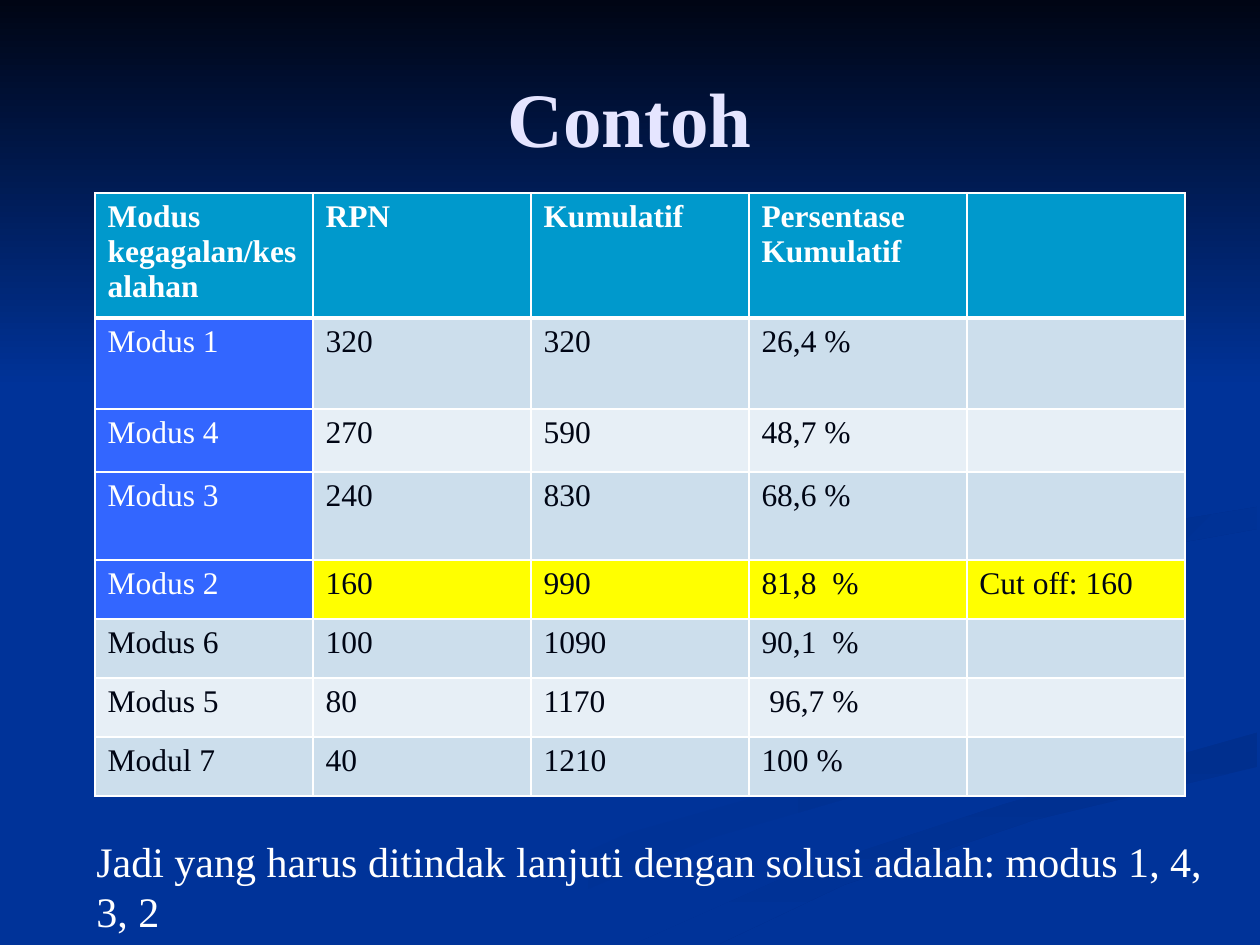
from dataclasses import dataclass

import pptx
import pptx.dml.color
import pptx.enum.shapes
import pptx.enum.text
import pptx.oxml
import pptx.oxml.ns
import pptx.util
from lxml import etree

PX = 914400 / 126


@dataclass(frozen=True)
class Theme:
    font: str = "Times New Roman"
    night: str = "000514"
    blue: str = "003399"
    shade: str = "002F8E"
    faint: str = "003193"
    title: str = "E5E5FF"
    white: str = "FFFFFF"
    header: str = "0099CC"
    chosen: str = "3366FF"
    cutoff: str = "FFFF00"
    bands: tuple = ("CCDEEC", "E7EFF6")
    title_size: int = 44
    note_size: int = 24
    cell_size: int = 18


THEME = Theme()

# Each wave: start colour, end colour, clockwise gradient angle, outline in px
WAVES = [
    (THEME.blue, THEME.faint, 0, [
        (984, 697), (774, 625), (725, 578), (747, 619), (960, 689), (975, 735),
        (629, 833), (378, 944), (455, 944), (711, 838), (990, 757), (1008, 732)]),
    (THEME.blue, THEME.faint, 45, [
        (1188, 718), (1140, 680), (955, 627), (912, 585), (940, 630), (1109, 692),
        (1157, 732), (1126, 762)]),
    (THEME.shade, THEME.blue, 90, [
        (634, 944), (719, 944), (844, 885), (1034, 820), (1257, 767), (1257, 732),
        (1004, 804), (794, 873)]),
    (THEME.blue, THEME.blue, 0, [
        (914, 585), (956, 627), (1159, 689), (1179, 740), (835, 842), (601, 944),
        (634, 944), (794, 873), (1004, 804), (1259, 732), (1259, 678), (1029, 620),
        (985, 580), (1052, 542), (1259, 507), (1259, 488), (993, 532)]),
    (THEME.shade, THEME.blue, 45, [
        (984, 580), (1041, 625), (1014, 595), (1062, 564), (1257, 529), (1257, 507),
        (1090, 534)]),
    (THEME.shade, THEME.blue, 45, [
        (861, 542), (1060, 499), (1126, 433), (1062, 346), (960, 294), (1066, 352),
        (1120, 422), (1061, 476), (803, 532), (727, 582), (784, 630), (757, 575)]),
]

HEADINGS = ["Modus kegagalan/kesalahan", "RPN", "Kumulatif", "Persentase Kumulatif", ""]
FAILURE_MODES = [
    ["Modus 1", "320", "320", "26,4 %", ""],
    ["Modus 4", "270", "590", "48,7 %", ""],
    ["Modus 3", "240", "830", "68,6 %", ""],
    ["Modus 2", "160", "990", "81,8  %", "Cut off: 160"],
    ["Modus 6", "100", "1090", "90,1  %", ""],
    ["Modus 5", "80", "1170", " 96,7 %", ""],
    ["Modul 7", "40", "1210", "100 %", ""],
]
CUTOFF_ROW = 4
ROW_HEIGHTS = [125, 91, 63, 88] + [59] * 4
COLUMN_WIDTH = 218


def emu(px):
    return pptx.util.Emu(round(px * PX))


def rgb(code):
    return pptx.dml.color.RGBColor.from_string(code)


def write(frame, text, *, size, color, bold=False, align=pptx.enum.text.PP_ALIGN.LEFT):
    paragraph = frame.paragraphs[0]
    paragraph.alignment = align
    run = paragraph.add_run()
    run.text = text
    run.font.name = THEME.font
    run.font.size = pptx.util.Pt(size)
    run.font.bold = bold
    run.font.color.rgb = rgb(color)


def add_borders(cell, **widths):
    """Draw white cell edges; widths in points are keyed L, R, T, B."""
    properties = cell._tc.get_or_add_tcPr()
    for side, width in widths.items():
        edge = etree.SubElement(properties, pptx.oxml.ns.qn(f"a:ln{side}"),
                                w=str(pptx.util.Pt(width)))
        fill = etree.SubElement(edge, pptx.oxml.ns.qn("a:solidFill"))
        etree.SubElement(fill, pptx.oxml.ns.qn("a:srgbClr"), val=THEME.white)


def cell_style(row, column):
    """Return the fill and text colour for a table position."""
    if row == 0:
        return THEME.header, THEME.white
    if column == 0 and row <= CUTOFF_ROW:
        return THEME.chosen, THEME.white
    if row == CUTOFF_ROW:
        return THEME.cutoff, THEME.night
    return THEME.bands[(row - 1) % 2], THEME.night


class Deck:
    def __init__(self, theme):
        self.theme = theme
        self.presentation = pptx.Presentation()
        self.presentation.slide_width = emu(1260)
        self.presentation.slide_height = emu(945)
        self.slide = self.presentation.slides.add_slide(self.presentation.slide_layouts[5])
        backdrop = self.slide.background.fill
        backdrop.solid()
        backdrop.fore_color.rgb = rgb(theme.blue)

    def paint(self, shape, start, end, angle):
        shape.shadow.inherit = False
        shape.line.fill.background()
        if start == end:
            shape.fill.solid()
            shape.fill.fore_color.rgb = rgb(start)
            return
        shape.fill.gradient()
        shape.fill.gradient_angle = 360 - angle
        for stop, color in zip(shape.fill.gradient_stops, (start, end)):
            stop.color.rgb = rgb(color)

    def wave(self, start, end, angle, outline):
        builder = self.slide.shapes.build_freeform(*outline[0], scale=PX)
        builder.add_line_segments(outline[1:], close=True)
        self.paint(builder.convert_to_shape(), start, end, angle)

    def sky(self, left, top, width, height):
        band = self.slide.shapes.add_shape(pptx.enum.shapes.MSO_SHAPE.RECTANGLE,
                                           *map(emu, (left, top, width, height)))
        self.paint(band, self.theme.night, self.theme.blue, 90)

    def title(self, text, left, top, width, height):
        heading = self.slide.shapes.title
        heading.left, heading.top, heading.width, heading.height = map(
            emu, (left, top, width, height))
        # Bring the title in front of the scenery
        self.slide.shapes._spTree.append(heading._element)
        heading.text_frame.vertical_anchor = pptx.enum.text.MSO_ANCHOR.MIDDLE
        write(heading.text_frame, text, size=self.theme.title_size, color=self.theme.title,
              bold=True, align=pptx.enum.text.PP_ALIGN.CENTER)

    def table(self, rows, left, top, column_width, heights):
        columns = len(rows[0])
        grid = self.slide.shapes.add_table(
            len(rows), columns, emu(left), emu(top),
            emu(column_width * columns), emu(sum(heights))).table
        for column in grid.columns:
            column.width = emu(column_width)
        for r, (texts, height) in enumerate(zip(rows, heights)):
            grid.rows[r].height = emu(height)
            for c, text in enumerate(texts):
                cell = grid.cell(r, c)
                fill, color = cell_style(r, c)
                add_borders(cell, L=1, R=1, T=3 if r == 1 else 1, B=3 if r == 0 else 1)
                cell.fill.solid()
                cell.fill.fore_color.rgb = rgb(fill)
                if text:
                    write(cell.text_frame, text, size=self.theme.cell_size, color=color,
                          bold=r == 0)

    def note(self, text, left, top, width, height):
        box = self.slide.shapes.add_textbox(*map(emu, (left, top, width, height)))
        box.text_frame.word_wrap = True
        write(box.text_frame, text, size=self.theme.note_size, color=self.theme.white)


def main():
    deck = Deck(THEME)
    for wave in WAVES:
        deck.wave(*wave)
    deck.sky(0, 0, 1260, 388)
    deck.title("Contoh", 63, 38, 1134, 157)
    deck.table([HEADINGS] + FAILURE_MODES, 95, 193, COLUMN_WIDTH, ROW_HEIGHTS)
    deck.note("Jadi yang harus ditindak lanjuti dengan solusi adalah: modus 1, 4, 3, 2",
              84, 829, 1162, 64)
    deck.presentation.save("out.pptx")


if __name__ == "__main__":
    main()
